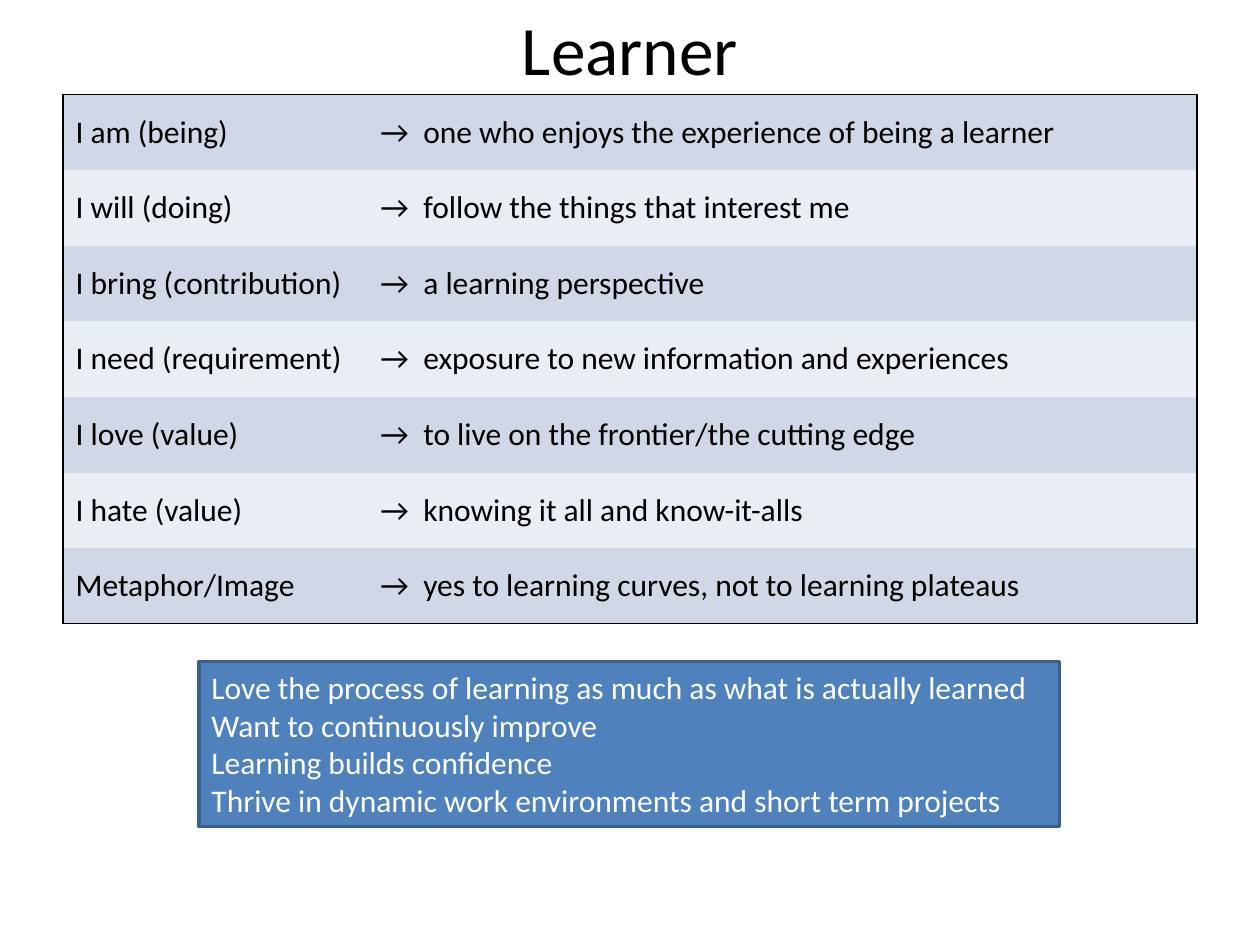
import lxml.etree
import pptx
import pptx.dml.color
import pptx.enum.shapes
import pptx.enum.text
import pptx.oxml.ns
import pptx.util

BLACK = pptx.dml.color.RGBColor(0x00, 0x00, 0x00)
WHITE = pptx.dml.color.RGBColor(0xFF, 0xFF, 0xFF)
BAND_DARK = pptx.dml.color.RGBColor(0xD0, 0xD8, 0xE8)
BAND_LIGHT = pptx.dml.color.RGBColor(0xE9, 0xED, 0xF4)
PANEL_BLUE = pptx.dml.color.RGBColor(0x4F, 0x81, 0xBD)
PANEL_EDGE = pptx.dml.color.RGBColor(0x3A, 0x5F, 0x8C)
FONT = "Calibri"
BODY_SIZE = 18
LABEL_SHARE = 2.42 / 9
ARROW_INDENT = pptx.util.Inches(0.34)

STATEMENTS = [
    ("I am (being)", "one who enjoys the experience of being a learner"),
    ("I will (doing)", "follow the things that interest me"),
    ("I bring (contribution)", "a learning perspective"),
    ("I need (requirement)", "exposure to new information and experiences"),
    ("I love (value)", "to live on the frontier/the cutting edge"),
    ("I hate (value)", "knowing it all and know-it-alls"),
    ("Metaphor/Image", "yes to learning curves, not to learning plateaus"),
]
STRENGTHS = [
    "Love the process of learning as much as what is actually learned",
    "Want to continuously improve",
    "Learning builds confidence",
    "Thrive in dynamic work environments and short term projects",
]


def add_run(paragraph, text, size, color):
    """Append one styled run to a paragraph."""
    run = paragraph.add_run()
    run.text = text
    run.font.name = FONT
    run.font.size = pptx.util.Pt(size)
    run.font.color.rgb = color


def set_borders(cell, visible_sides):
    """Draw black lines on the visible sides of a cell and clear the others."""
    qn = pptx.oxml.ns.qn
    properties = cell._tc.get_or_add_tcPr()
    for position, side in enumerate("LRTB"):
        edge = lxml.etree.Element(qn(f"a:ln{side}"), w=str(pptx.util.Pt(1)))
        if side in visible_sides:
            ink = lxml.etree.SubElement(edge, qn("a:solidFill"))
            lxml.etree.SubElement(ink, qn("a:srgbClr"), val=str(BLACK))
        else:
            lxml.etree.SubElement(edge, qn("a:noFill"))
        properties.insert(position, edge)


def add_heading(slide, box):
    """Place the centred slide heading in the box."""
    frame = slide.shapes.add_textbox(*box).text_frame
    frame.word_wrap = True
    frame.vertical_anchor = pptx.enum.text.MSO_ANCHOR.MIDDLE
    paragraph = frame.paragraphs[0]
    paragraph.alignment = pptx.enum.text.PP_ALIGN.CENTER
    add_run(paragraph, "Learner", 39.6, BLACK)


def add_statements(slide, box):
    """Place the banded table of statements in the box."""
    last = len(STATEMENTS) - 1
    table = slide.shapes.add_table(len(STATEMENTS), 2, *box).table
    table.first_row = table.horz_banding = False
    width = box[2]
    table.columns[0].width = int(width * LABEL_SHARE)
    table.columns[1].width = width - table.columns[0].width
    for row, (label, answer) in enumerate(STATEMENTS):
        outer = ("T" if row == 0 else "") + ("B" if row == last else "")
        for column, text in enumerate((label, f"→\t{answer}")):
            cell = table.cell(row, column)
            cell.fill.solid()
            cell.fill.fore_color.rgb = BAND_LIGHT if row % 2 else BAND_DARK
            cell.vertical_anchor = pptx.enum.text.MSO_ANCHOR.MIDDLE
            set_borders(cell, outer + "LR"[column])
            paragraph = cell.text_frame.paragraphs[0]
            add_run(paragraph, text, BODY_SIZE, BLACK)
            if column == 1:
                layout = paragraph._p.get_or_add_pPr()
                layout.set("marL", str(ARROW_INDENT))
                layout.set("indent", str(-ARROW_INDENT))


def add_strengths(slide, box):
    """Place the blue panel of strengths in the box."""
    panel = slide.shapes.add_shape(pptx.enum.shapes.MSO_SHAPE.RECTANGLE, *box)
    panel.shadow.inherit = False
    panel.fill.solid()
    panel.fill.fore_color.rgb = PANEL_BLUE
    panel.line.color.rgb = PANEL_EDGE
    panel.line.width = pptx.util.Pt(2)
    frame = panel.text_frame
    frame.word_wrap = True
    frame.auto_size = pptx.enum.text.MSO_AUTO_SIZE.SHAPE_TO_FIT_TEXT
    frame.vertical_anchor = pptx.enum.text.MSO_ANCHOR.TOP
    for index, strength in enumerate(STRENGTHS):
        paragraph = frame.add_paragraph() if index else frame.paragraphs[0]
        paragraph.alignment = pptx.enum.text.PP_ALIGN.LEFT
        add_run(paragraph, strength, BODY_SIZE, WHITE)


def main():
    """Build the Learner slide and save it."""
    deck = pptx.Presentation()
    deck.slide_width = pptx.util.Inches(10)
    deck.slide_height = pptx.util.Inches(7.5)
    slide = deck.slides.add_slide(deck.slide_layouts[6])

    def share(left, top, width, height):
        """Turn shares of the slide into a box."""
        return (int(deck.slide_width * left), int(deck.slide_height * top),
                int(deck.slide_width * width), int(deck.slide_height * height))

    add_heading(slide, share(0.05, 0.17 / 7.5, 0.9, 0.42 / 7.5))
    add_statements(slide, share(0.05, 0.1, 0.9, 0.56))
    add_strengths(slide, share(0.158, 0.7, 0.683, 1.31 / 7.5))
    deck.save("out.pptx")


if __name__ == "__main__":
    main()
